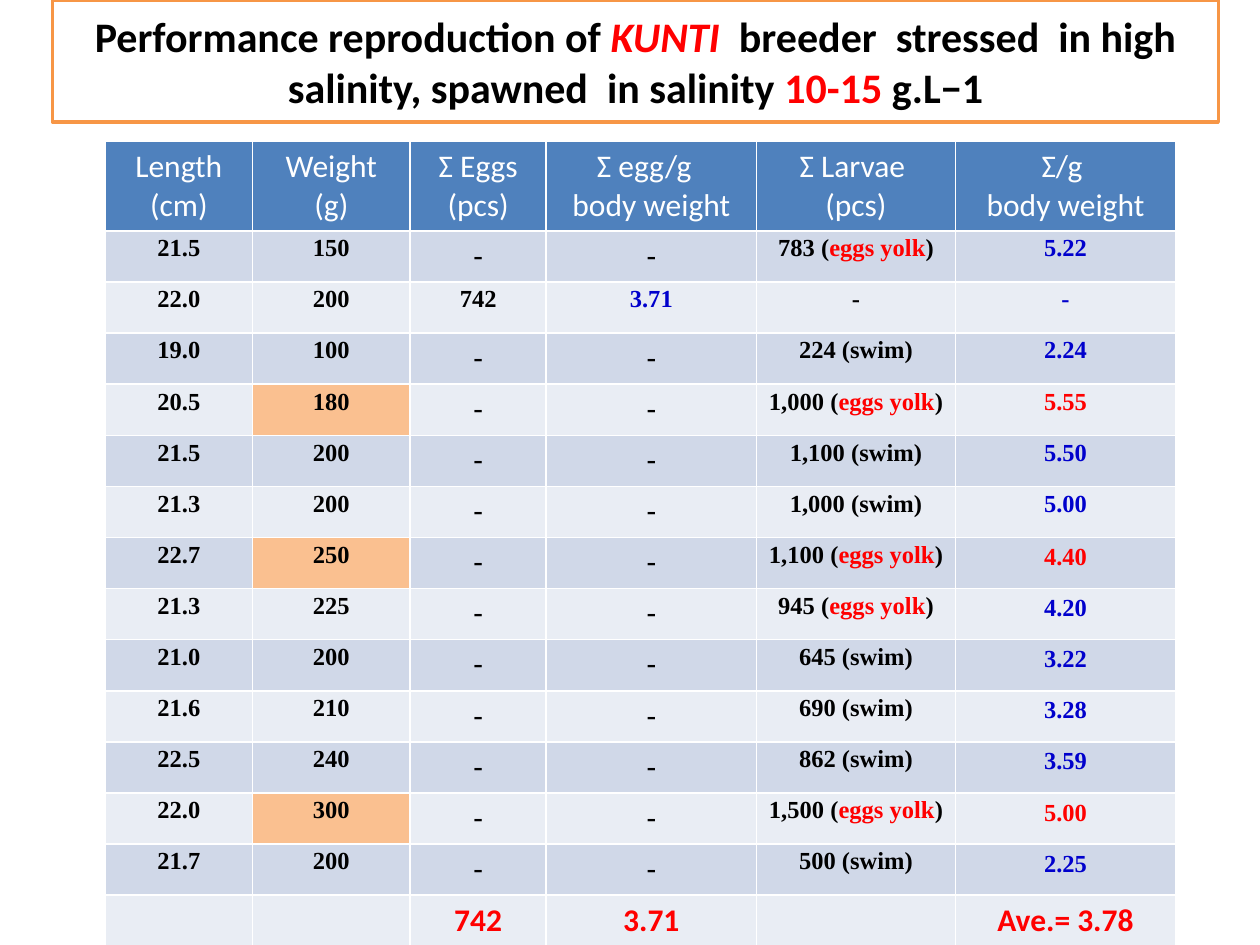
from pptx import Presentation
from pptx.dml.color import RGBColor
from pptx.enum.text import MSO_ANCHOR, PP_ALIGN
from pptx.util import Cm, Pt

BLACK, WHITE, RED, BLUE = "000000", "FFFFFF", "FF0000", "0000CC"
HEAD, BANDS, MARKED = "4F81BD", ("D0D8E8", "E9EDF4"), "FAC090"
WIDTHS = (2.97, 3.18, 2.74, 4.24, 4.01, 4.44)
HEADERS = (("Length", "(cm)"), ("Weight", "(g)"), ("Ʃ Eggs", "(pcs)"),
           ("Ʃ egg/g  ", "body weight"), ("Ʃ Larvae ", "(pcs)"), ("Ʃ/g ", "body weight"))
YOLK = "eggs yolk"
BREEDERS = (
    ("21.5", "150", "-", "-", "783 (eggs yolk)", "5.22"),
    ("22.0", "200", "742", "3.71", "-", "-"),
    ("19.0", "100", "-", "-", "224 (swim)", "2.24"),
    ("20.5", "180", "-", "-", "1,000 (eggs yolk)", "5.55"),
    ("21.5", "200", "-", "-", "1,100 (swim)", "5.50"),
    ("21.3", "200", "-", "-", "1,000 (swim)", "5.00"),
    ("22.7", "250", "-", "-", "1,100 (eggs yolk)", "4.40"),
    ("21.3", "225", "-", "-", "945 (eggs yolk)", "4.20"),
    ("21.0", "200", "-", "-", "645 (swim)", "3.22"),
    ("21.6", "210", "-", "-", "690 (swim)", "3.28"),
    ("22.5", "240", "-", "-", "862 (swim)", "3.59"),
    ("22.0", "300", "-", "-", "1,500 (eggs yolk)", "5.00"),
    ("21.7", "200", "-", "-", "500 (swim)", "2.25"),
)
SUMMARY = ("", "", "742", "3.71", "", "Ave.= 3.78")
MARKED_ROWS = (4, 7, 12)
FIRST_PADDED_ROW = 7


def rgb(value):
    """Turn a hex string into a colour."""
    return RGBColor.from_string(value)


def paint(obj, color):
    """Give a shape or cell a solid fill."""
    obj.fill.solid()
    obj.fill.fore_color.rgb = rgb(color)


def write(p, runs, size, name="Calibri", bold=False):
    """Write (text, colour) runs into a centred paragraph."""
    p.alignment = PP_ALIGN.CENTER
    p.font.size, p.font.name, p.font.bold = Pt(size), name, bold
    for text, color in runs:
        r = p.add_run()
        r.text = text
        r.font.color.rgb = rgb(color)


def add_title(s):
    """Frame and fill the title placeholder."""
    sp = s.shapes.title
    sp.left, sp.top, sp.width, sp.height = Cm(1.06), Cm(0), Cm(23.5), Cm(2.46)
    paint(sp, WHITE)
    sp.line.color.rgb = rgb("F79646")
    sp.line.width = Pt(2)
    tf = sp.text_frame
    tf.vertical_anchor = MSO_ANCHOR.MIDDLE
    p = tf.paragraphs[0]
    write(p, (("Performance reproduction of ", BLACK), ("KUNTI ", RED),
              (" breeder  stressed  in high salinity, spawned  in salinity ", BLACK),
              ("10-15 ", RED), ("g.L−1", BLACK)), 24, bold=True)
    p.runs[1].font.italic = True


def fill_header(cell, lines):
    """Write a two-line column heading."""
    paint(cell, HEAD)
    tf = cell.text_frame
    write(tf.paragraphs[0], [(lines[0], WHITE)], 18)
    write(tf.add_paragraph(), [(lines[1], WHITE)], 18)


def fill_value(cell, text, row, col):
    """Write one measurement, with its colour and margins."""
    marked = row in MARKED_ROWS
    paint(cell, MARKED if marked and col == 1 else BANDS[(row - 1) % 2])
    p = cell.text_frame.paragraphs[0]
    if col in (2, 3) and text == "-":
        write(p, [(text, BLACK)], 18)
        return
    color = BLACK
    if col == 5:
        color = RED if marked else BLUE
    elif col == 3:
        color = BLUE
    before, yolk, after = text.partition(YOLK)
    runs = [(t, c) for t, c in ((before, color), (yolk, RED), (after, color)) if t]
    write(p, runs, 14, "Times New Roman", True)
    if col < 5 or row < FIRST_PADDED_ROW:
        p.line_spacing = 1.15
        cell.margin_left = cell.margin_right = Cm(0.18)
        cell.margin_top = cell.margin_bottom = Cm(0)


def fill_summary(cell, text):
    """Write one cell of the closing row."""
    paint(cell, BANDS[1])
    if text:
        write(cell.text_frame.paragraphs[0], [(text, RED)], 18, bold=True)


def add_breeder_table(s):
    """Build the table of breeders."""
    last = len(BREEDERS) + 1
    table = s.shapes.add_table(last + 1, len(WIDTHS), Cm(2.12), Cm(2.85),
                               Cm(sum(WIDTHS)), Cm(16.2)).table
    for i, row in enumerate(table.rows):
        row.height = Cm(1.03 if i else 1.8)
    for col, width in enumerate(WIDTHS):
        table.columns[col].width = Cm(width)
        fill_header(table.cell(0, col), HEADERS[col])
        for row, values in enumerate(BREEDERS, 1):
            fill_value(table.cell(row, col), values[col], row, col)
        fill_summary(table.cell(last, col), SUMMARY[col])


def main():
    """Build and save the slide."""
    prs = Presentation()
    prs.slide_width, prs.slide_height = Cm(25.4), Cm(19.05)
    s = prs.slides.add_slide(prs.slide_layouts[5])
    add_title(s)
    add_breeder_table(s)
    prs.save("out.pptx")


if __name__ == "__main__":
    main()
